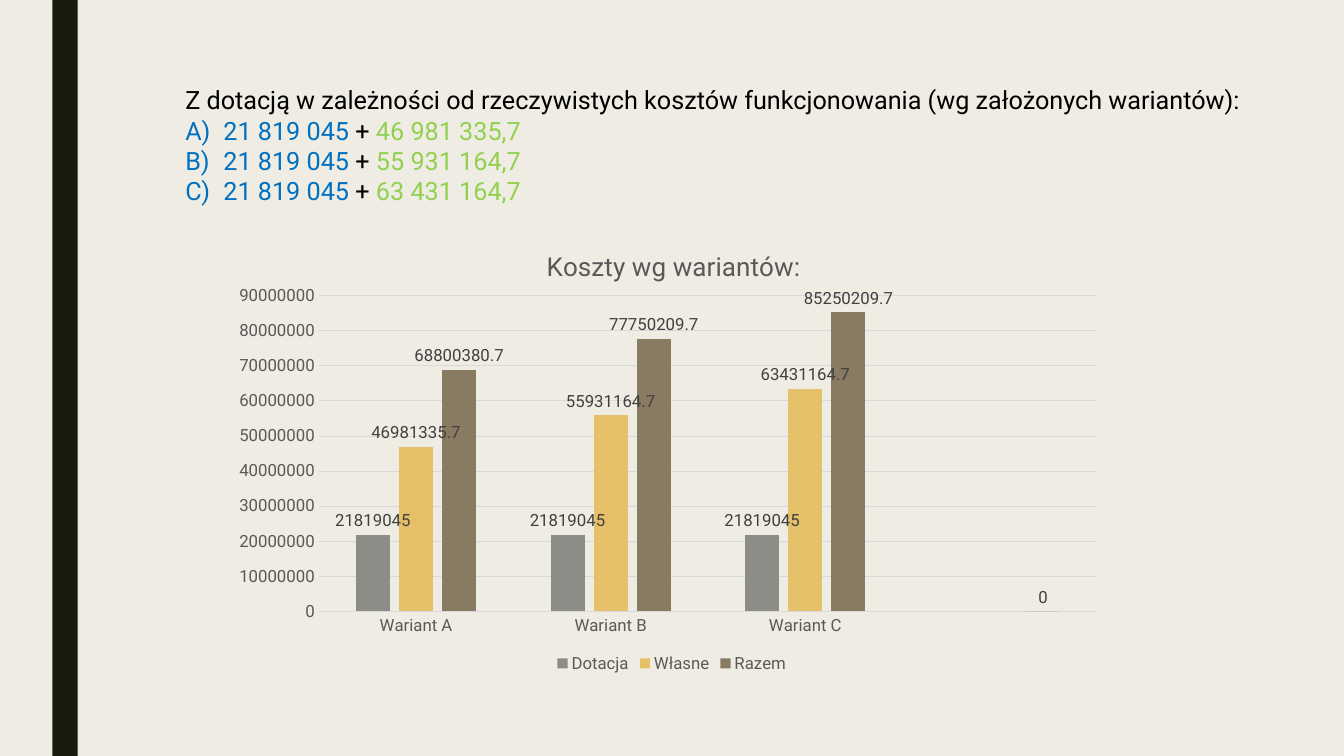
import pptx
import pptx.chart.data
import pptx.dml.color
import pptx.enum.chart
import pptx.enum.shapes
import pptx.oxml
import pptx.oxml.ns
import pptx.util

Cm = pptx.util.Cm
Pt = pptx.util.Pt

INTRO = "Z dotacją w zależności od rzeczywistych kosztów funkcjonowania (wg założonych wariantów):"
GRANT = "21 819 045 "
OWN_COSTS = ["46 981 335,7", "55 931 164,7", "63 431 164,7"]

CHART_TITLE = "Koszty wg wariantów:"
CATEGORIES = ["Wariant A", "Wariant B", "Wariant C", ""]
SERIES = [
    ("Dotacja", (21819045, 21819045, 21819045, None), "8C8D86"),
    ("Własne", (46981335.7, 55931164.7, 63431164.7, None), "E6C069"),
    ("Razem", (68800380.7, 77750209.7, 85250209.7, 0), "897B61"),
]

THEME = {
    "font": "Roboto",
    "background": "EFEDE3",
    "stripe": "191B0E",
    "text": "000000",
    "grant": "0070C0",
    "own": "92D050",
    "chart_text": "595959",
    "label": "404040",
    "grid": "D9D9D9",
    "body_size": 18,
    "title_size": 18.6,
    "chart_size": 12,
}

SLIDE_SIZE = (Cm(33.87), Cm(19.05))
STRIPE_BOX = (Cm(1.32), Cm(0), Cm(0.64), Cm(19.05))
TEXT_BOX = (Cm(4.42), Cm(2.01), Cm(28.73), Cm(4.11))
CHART_BOX = (Cm(5.64), Cm(5.77), Cm(22.58), Cm(11.3))
LIST_INDENT = Cm(0.96)
PLOT_LAYOUT = {"layoutTarget": "inner", "xMode": "edge", "yMode": "edge",
               "x": 0.106, "y": 0.149, "w": 0.869, "h": 0.704}
TITLE_LAYOUT = {"xMode": "edge", "yMode": "edge", "x": 0.355, "y": 0.035}


def color(name):
    return pptx.dml.color.RGBColor.from_string(THEME.get(name, name))


def set_values(target, values):
    for name, value in values.items():
        setattr(target, name, value)


def fill_solid(fill, name):
    fill.solid()
    fill.fore_color.rgb = color(name)


def format_font(font, size, color_name):
    set_values(font, {"name": THEME["font"], "size": Pt(THEME[size]), "bold": False})
    font.color.rgb = color(color_name)


def add_runs(paragraph, runs):
    for text, color_name in runs:
        run = paragraph.add_run()
        run.text = text
        format_font(run.font, "body_size", color_name)


def number_paragraph(paragraph):
    properties = paragraph._p.get_or_add_pPr()
    properties.set("marL", str(LIST_INDENT))
    properties.set("indent", str(-LIST_INDENT))
    numbering = pptx.oxml.parse_xml(
        f'<a:buAutoNum {pptx.oxml.ns.nsdecls("a")} type="alphaUcParenR"/>')
    properties.append(numbering)


def set_layout(parent, values, predecessor):
    for previous in parent.findall(pptx.oxml.ns.qn("c:layout")):
        parent.remove(previous)
    parts = "".join(f'<c:{name} val="{value}"/>' for name, value in values.items())
    layout = pptx.oxml.parse_xml(
        f'<c:layout {pptx.oxml.ns.nsdecls("c")}>'
        f'<c:manualLayout>{parts}</c:manualLayout></c:layout>')
    if predecessor is None:
        parent.insert(0, layout)
    else:
        predecessor.addnext(layout)


def add_stripe(slide):
    stripe = slide.shapes.add_shape(pptx.enum.shapes.MSO_SHAPE.RECTANGLE, *STRIPE_BOX)
    stripe.shadow.inherit = False
    fill_solid(stripe.fill, "stripe")
    stripe.line.fill.background()


def add_variants(slide):
    frame = slide.shapes.add_textbox(*TEXT_BOX).text_frame
    frame.word_wrap = True
    add_runs(frame.paragraphs[0], [(INTRO, "text")])
    for own_cost in OWN_COSTS:
        paragraph = frame.add_paragraph()
        number_paragraph(paragraph)
        add_runs(paragraph, [(GRANT, "grant"), ("+ ", "text"), (own_cost, "own")])


def format_axes(chart):
    no_tick = pptx.enum.chart.XL_TICK_MARK.NONE
    for axis in (chart.category_axis, chart.value_axis):
        set_values(axis, {"major_tick_mark": no_tick, "minor_tick_mark": no_tick})
        format_font(axis.tick_labels.font, "chart_size", "chart_text")
    values = chart.value_axis
    set_values(values, {"minimum_scale": 0, "maximum_scale": 90000000,
                        "major_unit": 10000000, "has_major_gridlines": True})
    values.format.line.fill.background()
    for line in (chart.category_axis.format.line, values.major_gridlines.format.line):
        fill_solid(line.fill, "grid")
        line.width = Pt(0.75)


def format_series(plot):
    set_values(plot, {"gap_width": 219, "overlap": -27, "vary_by_categories": False})
    for series, (_, _, series_color) in zip(plot.series, SERIES):
        series.invert_if_negative = False
        fill_solid(series.format.fill, series_color)
        labels = series.data_labels
        set_values(labels, {"show_value": True,
                            "position": pptx.enum.chart.XL_LABEL_POSITION.OUTSIDE_END})
        format_font(labels.font, "chart_size", "label")


def add_cost_chart(slide):
    data = pptx.chart.data.CategoryChartData()
    data.categories = CATEGORIES
    for name, values, _ in SERIES:
        data.add_series(name, values)
    chart = slide.shapes.add_chart(
        pptx.enum.chart.XL_CHART_TYPE.COLUMN_CLUSTERED, *CHART_BOX, data).chart
    format_font(chart.font, "chart_size", "text")
    set_values(chart, {"has_title": True, "has_legend": True})

    title = chart.chart_title
    title.text_frame.text = CHART_TITLE
    format_font(title.text_frame.paragraphs[0].runs[0].font, "title_size", "chart_text")
    title_element = title._element
    set_layout(title_element, TITLE_LAYOUT, title_element.find(pptx.oxml.ns.qn("c:tx")))
    set_layout(chart._chartSpace.chart.plotArea, PLOT_LAYOUT, None)

    set_values(chart.legend, {"position": pptx.enum.chart.XL_LEGEND_POSITION.BOTTOM,
                              "include_in_layout": False})
    format_font(chart.legend.font, "chart_size", "chart_text")
    format_axes(chart)
    format_series(chart.plots[0])


def main():
    presentation = pptx.Presentation()
    presentation.slide_width, presentation.slide_height = SLIDE_SIZE
    slide = presentation.slides.add_slide(presentation.slide_layouts[6])
    fill_solid(slide.background.fill, "background")
    add_stripe(slide)
    add_variants(slide)
    add_cost_chart(slide)
    presentation.save("out.pptx")


if __name__ == "__main__":
    main()
